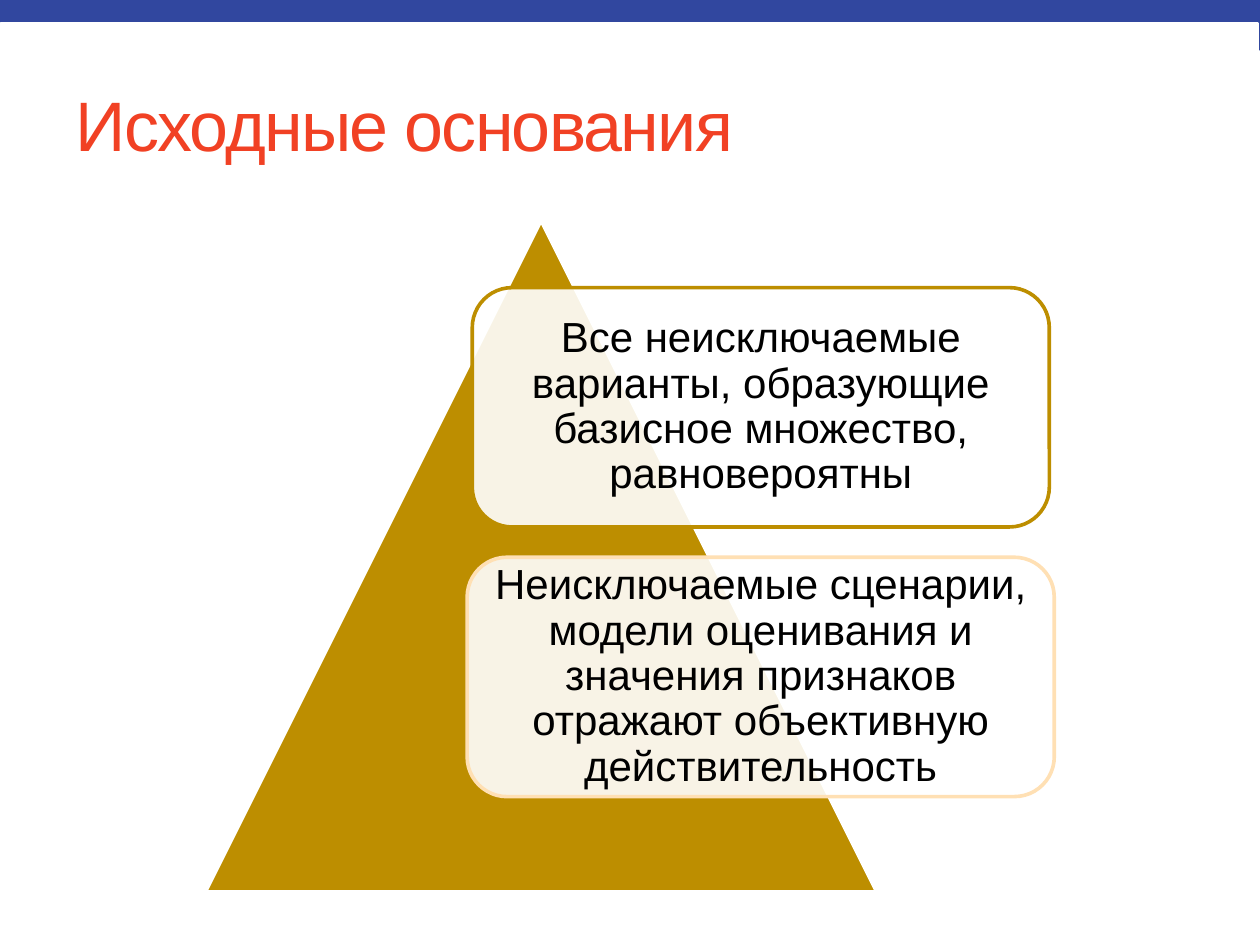
from lxml import etree
from pptx import Presentation
from pptx.dml.color import RGBColor
from pptx.enum.shapes import MSO_SHAPE
from pptx.enum.text import MSO_ANCHOR, PP_ALIGN
from pptx.oxml.ns import qn
from pptx.util import Inches, Pt

RECTANGLE = MSO_SHAPE.RECTANGLE
TRIANGLE = MSO_SHAPE.ISOSCELES_TRIANGLE
ROUNDED = MSO_SHAPE.ROUNDED_RECTANGLE
MIDDLE = MSO_ANCHOR.MIDDLE
LEFT, CENTER = PP_ALIGN.LEFT, PP_ALIGN.CENTER

FONT = "Arial"
TITLE_ONLY = 5
COLORS = {
    "band": "31479F",
    "white": "FFFFFF",
    "title": "F14124",
    "gold": "BD8E00",
    "cream": "FFE0B4",
    "text": "000000",
}
STATEMENTS = [
    ("Все неисключаемые варианты, образующие базисное множество, равновероятны",
     4.58, "gold"),
    ("Неисключаемые сценарии, модели оценивания и значения признаков "
     "отражают объективную действительность", 4.66, "cream"),
]


def rgb(name):
    return RGBColor.from_string(COLORS[name])


def add_box(slide, kind, box, fill, line=None):
    shape = slide.shapes.add_shape(kind, *map(Inches, box))
    shape.shadow.inherit = False
    shape.fill.solid()
    shape.fill.fore_color.rgb = rgb(fill)
    if line:
        shape.line.color.rgb = rgb(line)
        shape.line.width = Pt(2.08)
    else:
        shape.line.fill.background()
    return shape


def set_opacity(shape, percent):
    color = shape.fill._xPr.find(f"{qn('a:solidFill')}/{qn('a:srgbClr')}")
    etree.SubElement(color, qn("a:alpha"), val=str(percent * 1000))


def style_text(shape, text, size, color, alignment):
    frame = shape.text_frame
    frame.text = text
    frame.word_wrap = True
    frame.vertical_anchor = MIDDLE
    paragraph = frame.paragraphs[0]
    paragraph.alignment = alignment
    paragraph.font.name = FONT
    paragraph.font.size = Pt(size)
    paragraph.font.color.rgb = rgb(color)
    return paragraph


def add_header(slide, box):
    left, top, width, height = box
    # Blue band, with a white panel over its lower part
    add_box(slide, RECTANGLE, (left, top, width, 0.4), "band")
    add_box(slide, RECTANGLE, (left + 0.01, top + 0.19, width - 0.03, 0.39),
            "white", "white")

    # Title, brought in front of the band
    title = slide.shapes.title
    title.element.getparent().append(title.element)
    title.left, title.top = Inches(left + 0.5), Inches(top + 0.44)
    title.width, title.height = Inches(width - 1), Inches(height - 0.44)
    paragraph = style_text(title, "Исходные основания", 40, "title", LEFT)
    paragraph.runs[0].font._element.set("spc", "-100")


def add_pyramid(slide, box):
    left, top, width, height = box
    add_box(slide, TRIANGLE, box, "gold", "white")

    # Statement cards, stacked on one centre line
    card_height, pitch = 1.9, 2.14
    center = left + width * 0.827
    for index, (text, card_width, line) in enumerate(STATEMENTS):
        card_box = (center - card_width / 2, top + height / 10 + index * pitch,
                    card_width, card_height)
        card = add_box(slide, ROUNDED, card_box, "white", line)
        set_opacity(card, 90)
        frame = card.text_frame
        frame.margin_left = frame.margin_right = Inches(0.1)
        frame.margin_top = frame.margin_bottom = Inches(0.1)
        paragraph = style_text(card, text, 24, "text", CENTER)
        paragraph.line_spacing = 0.9


def main():
    presentation = Presentation()
    presentation.slide_width = Inches(10)
    presentation.slide_height = Inches(7.5)
    slide = presentation.slides.add_slide(presentation.slide_layouts[TITLE_ONLY])
    add_header(slide, (0, 0, 10, 1.52))
    add_pyramid(slide, (1.63, 1.75, 5.33, 5.33))
    presentation.save("out.pptx")


if __name__ == "__main__":
    main()
